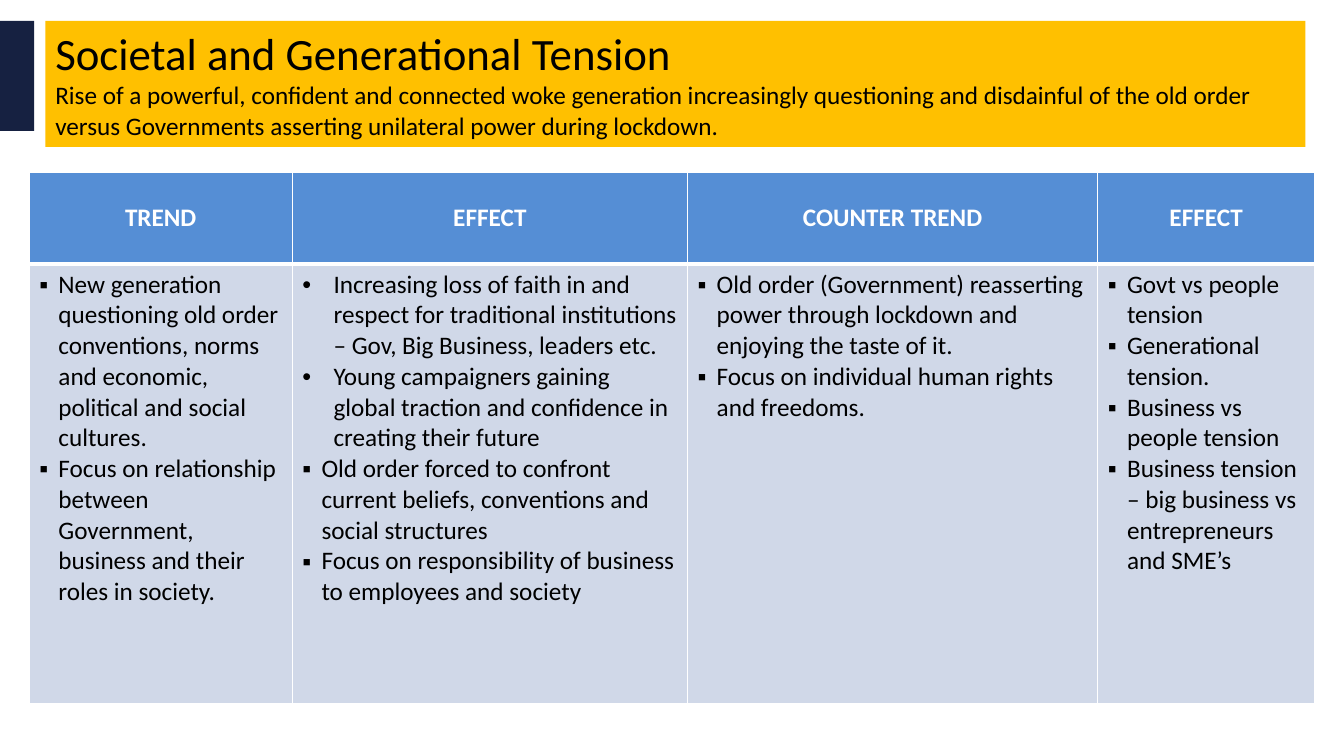
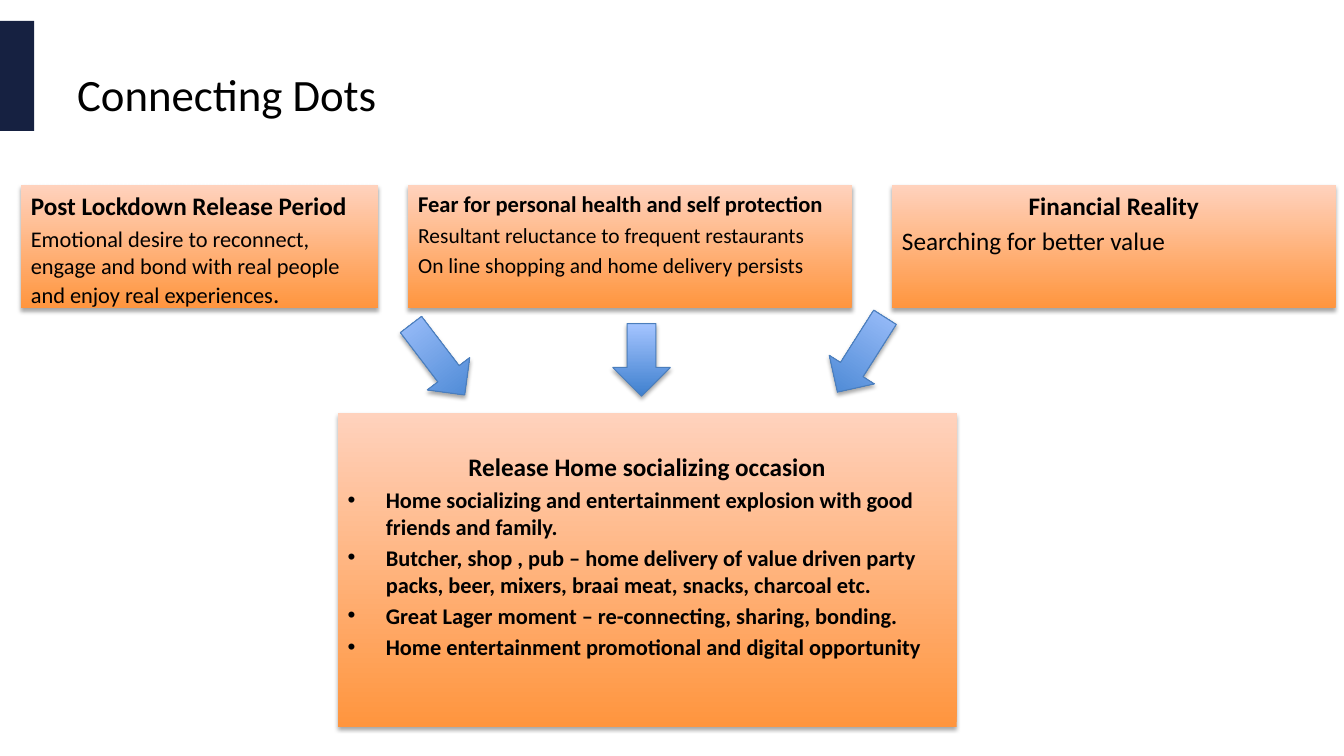
from dataclasses import dataclass
from typing import Optional

import pptx
import pptx.dml.color
import pptx.enum.shapes
import pptx.enum.text
import pptx.oxml
import pptx.oxml.ns
import pptx.oxml.xmlchemy
import pptx.util

SHAPE = pptx.enum.shapes.MSO_SHAPE
ALIGN = pptx.enum.text.PP_ALIGN
ANCHOR = pptx.enum.text.MSO_ANCHOR

SLIDE_WIDTH, SLIDE_HEIGHT = pptx.util.Inches(13.33), pptx.util.Inches(7.5)
COLUMNS, ROWS = 64, 36
FONT = "Calibri"
BLACK, WHITE = "000000", "FFFFFF"
NAVY, AMBER = "162141", "FFC000"
HEADER_BLUE, CELL_BLUE = "558ED5", "D0D8E8"
ORANGE_FADE = ("FF953E", "FFD2BD")
BLUE_FADE = ("3F80CE", "A4C4FF")
ARROW_EDGE = "4B7EBC"
TITLE_SIZE, BODY_SIZE = 32, 18
PARAGRAPH_GAP = 3


@dataclass(frozen=True)
class Area:
    """A rectangle in columns and rows of the slide grid."""
    left: float
    top: float
    width: float
    height: float

    def lengths(self) -> tuple[int, int, int, int]:
        return across(self.left), down(self.top), across(self.width), down(self.height)


@dataclass(frozen=True)
class Line:
    text: str
    size: float = BODY_SIZE
    bold: bool = False
    centred: bool = False
    bullet: str = ""
    indent: float = 0
    tail: str = ""


@dataclass(frozen=True)
class Card:
    area: Area
    lines: tuple[Line, ...]
    inset_top: float = 0.05


@dataclass(frozen=True)
class Arrow:
    area: Area
    turn: float = 0


@dataclass(frozen=True)
class TableColumn:
    heading: str
    width: float
    points: tuple[Line, ...]


def square(text: str) -> Line:
    return Line(text, bullet="▪", indent=0.19)


def dot(text: str) -> Line:
    return Line(text, bullet="•", indent=0.31)


def occasion(text: str) -> Line:
    return Line(text, size=16, bold=True, bullet="•", indent=0.38)


BAND = Area(0, 1, 1.63, 5.23)
BANNER = Area(2.16, 1, 60, 6)
TITLE = Area(3.2, 1.44, 57.6, 6)
TABLE_LEFT, TABLE_TOP = 1.39, 8.21
TABLE_ROWS = (4.37, 20.93)

TENSIONS = (
    TableColumn("TREND", 12.53, (
        square("New generation questioning old order conventions, norms and economic, "
               "political and social cultures."),
        square("Focus on relationship between Government, business and their roles in society."),
    )),
    TableColumn("EFFECT", 18.82, (
        dot("Increasing loss of faith in and respect for traditional institutions "
            "– Gov, Big Business, leaders etc."),
        dot("Young campaigners gaining global traction and confidence in creating their future"),
        square("Old order forced to confront current beliefs, conventions and social structures"),
        square("Focus on responsibility of business to employees and society"),
    )),
    TableColumn("COUNTER TREND", 19.54, (
        square("Old order (Government) reasserting power through lockdown and enjoying "
               "the taste of it."),
        square("Focus on individual human rights and freedoms."),
    )),
    TableColumn("EFFECT", 10.32, (
        square("Govt vs people tension"),
        square("Generational tension."),
        square("Business vs people tension"),
        square("Business tension – big business vs entrepreneurs and SME’s"),
    )),
)

CARDS = (
    Card(Area(1, 8.83, 17, 5.86), (
        Line("Post Lockdown Release Period", bold=True),
        Line("Emotional desire to reconnect, engage and bond with real people "
             "and enjoy real experiences", size=16, tail="."),
    )),
    Card(Area(19.44, 8.83, 21.12, 5.86), (
        Line("Fear for personal health and self protection", size=16.1, bold=True),
        Line("Resultant reluctance to frequent restaurants", size=15.3),
        Line("On line shopping and home delivery persists", size=15.3),
    )),
    Card(Area(42.48, 8.83, 21.12, 5.86), (
        Line("Financial Reality", bold=True, centred=True),
        Line("Searching for better value"),
    )),
    Card(Area(16.08, 19.68, 29.47, 14.93), (
        Line("Release Home socializing occasion", bold=True, centred=True),
        occasion("Home socializing and entertainment explosion with good friends and family."),
        occasion("Butcher, shop , pub – home delivery of value driven party packs, beer, "
                 "mixers, braai meat, snacks, charcoal etc."),
        occasion("Great Lager moment – re-connecting, sharing, bonding."),
        occasion("Home entertainment promotional and digital opportunity"),
    ), inset_top=0.38),
)

ARROWS = (
    Arrow(Area(19.58, 15.02, 2.54, 4.22), turn=322.7),
    Arrow(Area(29.18, 15.41, 2.74, 3.46)),
    Arrow(Area(39.74, 14.78, 2.54, 4.22), turn=32.4),
)


def across(columns: float) -> int:
    return round(SLIDE_WIDTH * columns / COLUMNS)


def down(rows: float) -> int:
    return round(SLIDE_HEIGHT * rows / ROWS)


def colour(code: str) -> pptx.dml.color.RGBColor:
    return pptx.dml.color.RGBColor.from_string(code)


def add_xml(parent: pptx.oxml.xmlchemy.BaseOxmlElement, markup: str) -> None:
    """Append a DrawingML element, given without its namespace declaration."""
    name, rest = markup[1:].split(" ", 1)
    namespace = pptx.oxml.ns.nsdecls("a")
    parent.append(pptx.oxml.parse_xml(f"<{name} {namespace} {rest}"))


def add_text(frame: pptx.text.text.TextFrame, text: str, *, size: float = BODY_SIZE,
             ink: str = BLACK, bold: bool = False, centred: bool = False,
             bullet: str = "", indent: float = 0, tail: str = "", gap: float = 0) -> None:
    """Add a paragraph; the tail is a closing span at body size."""
    first = len(frame.paragraphs) == 1 and not frame.paragraphs[0].runs
    para = frame.paragraphs[0] if first else frame.add_paragraph()
    if bullet:
        properties = para._p.get_or_add_pPr()
        hang = pptx.util.Inches(indent)
        properties.set("marL", str(hang))
        properties.set("indent", str(-hang))
        add_xml(properties, '<a:buFont typeface="Arial"/>')
        add_xml(properties, f'<a:buChar char="{bullet}"/>')
    para.alignment = ALIGN.CENTER if centred else ALIGN.LEFT
    if not first:
        para.space_before = pptx.util.Pt(gap)
    for words, points in ((text, size), (tail, BODY_SIZE)):
        if words:
            span = para.add_run()
            span.text = words
            span.font.name = FONT
            span.font.size = pptx.util.Pt(points)
            span.font.bold = bold
            span.font.color.rgb = colour(ink)


def add_lines(frame: pptx.text.text.TextFrame, lines: tuple[Line, ...], gap: float = 0) -> None:
    for line in lines:
        add_text(frame, line.text, size=line.size, bold=line.bold, centred=line.centred,
                 bullet=line.bullet, indent=line.indent, tail=line.tail, gap=gap)


def add_block(page: pptx.slide.Slide, area: Area, *, kind: SHAPE = SHAPE.RECTANGLE,
              fill: str = "", fade: Optional[tuple[str, str]] = None,
              edge: str = "") -> pptx.shapes.autoshape.Shape:
    """Draw a flat shape, or a shadowed one that fades from bottom to top."""
    box = page.shapes.add_shape(kind, *area.lengths())
    box.shadow.inherit = False
    if fade:
        box.fill.gradient()
        box.fill.gradient_angle = 90
        for stop, position, code in zip(box.fill.gradient_stops, (0, 1), fade):
            stop.position = position
            stop.color.rgb = colour(code)
        effects = box._element.spPr.find(pptx.oxml.ns.qn("a:effectLst"))
        blur, distance = pptx.util.Pt(3.1), pptx.util.Pt(1.8)
        add_xml(effects, f'<a:outerShdw blurRad="{blur}" dist="{distance}" dir="5400000" '
                         f'rotWithShape="0"><a:srgbClr val="{BLACK}">'
                         '<a:alpha val="35000"/></a:srgbClr></a:outerShdw>')
    else:
        box.fill.solid()
        box.fill.fore_color.rgb = colour(fill)
    if edge:
        box.line.color.rgb = colour(edge)
        box.line.width = pptx.util.Pt(0.75)
    else:
        box.line.fill.background()
    box.text_frame.word_wrap = True
    box.text_frame.vertical_anchor = ANCHOR.TOP
    return box


def style_cell(cell: pptx.table._Cell, fill: str, top: float, bottom: float) -> None:
    """Give a cell its fill and white borders, in points."""
    properties = cell._tc.get_or_add_tcPr()
    for side, points in (("L", 1), ("R", 1), ("T", top), ("B", bottom)):
        add_xml(properties, f'<a:ln{side} w="{pptx.util.Pt(points)}"><a:solidFill>'
                            f'<a:srgbClr val="{WHITE}"/></a:solidFill></a:ln{side}>')
    cell.fill.solid()
    cell.fill.fore_color.rgb = colour(fill)


def add_tension_table(page: pptx.slide.Slide) -> None:
    area = Area(TABLE_LEFT, TABLE_TOP, sum(column.width for column in TENSIONS), sum(TABLE_ROWS))
    table = page.shapes.add_table(len(TABLE_ROWS), len(TENSIONS), *area.lengths()).table
    for row, height in zip(table.rows, TABLE_ROWS):
        row.height = down(height)
    for index, column in enumerate(TENSIONS):
        table.columns[index].width = across(column.width)
        header, body = table.cell(0, index), table.cell(1, index)
        style_cell(header, HEADER_BLUE, top=1, bottom=3)
        style_cell(body, CELL_BLUE, top=3, bottom=1)
        header.vertical_anchor = ANCHOR.MIDDLE
        add_text(header.text_frame, column.heading, ink=WHITE, bold=True, centred=True)
        add_lines(body.text_frame, column.points)


def add_page(deck: pptx.presentation.Presentation) -> pptx.slide.Slide:
    """Add a blank slide with the navy band at its left edge."""
    page = deck.slides.add_slide(deck.slide_layouts[6])
    add_block(page, BAND, fill=NAVY)
    return page


def build_tension_page(deck: pptx.presentation.Presentation) -> None:
    page = add_page(deck)
    add_tension_table(page)
    banner = add_block(page, BANNER, fill=AMBER).text_frame
    add_text(banner, "Societal and Generational Tension", size=TITLE_SIZE)
    add_text(banner, "Rise of a powerful, confident and connected woke generation increasingly "
                     "questioning and disdainful of the old order versus Governments asserting "
                     "unilateral power during lockdown.")


def build_dots_page(deck: pptx.presentation.Presentation) -> None:
    page = add_page(deck)
    title = page.shapes.add_textbox(*TITLE.lengths()).text_frame
    title.word_wrap = True
    title.vertical_anchor = ANCHOR.MIDDLE
    add_text(title, "Connecting Dots", size=TITLE_SIZE)
    for card in CARDS:
        frame = add_block(page, card.area, fade=ORANGE_FADE).text_frame
        frame.margin_top = pptx.util.Inches(card.inset_top)
        add_lines(frame, card.lines, gap=PARAGRAPH_GAP)
    for arrow in ARROWS:
        box = add_block(page, arrow.area, kind=SHAPE.DOWN_ARROW, fade=BLUE_FADE, edge=ARROW_EDGE)
        box.rotation = arrow.turn


def main() -> None:
    deck = pptx.Presentation()
    deck.slide_width, deck.slide_height = SLIDE_WIDTH, SLIDE_HEIGHT
    build_tension_page(deck)
    build_dots_page(deck)
    deck.save("out.pptx")


if __name__ == "__main__":
    main()
